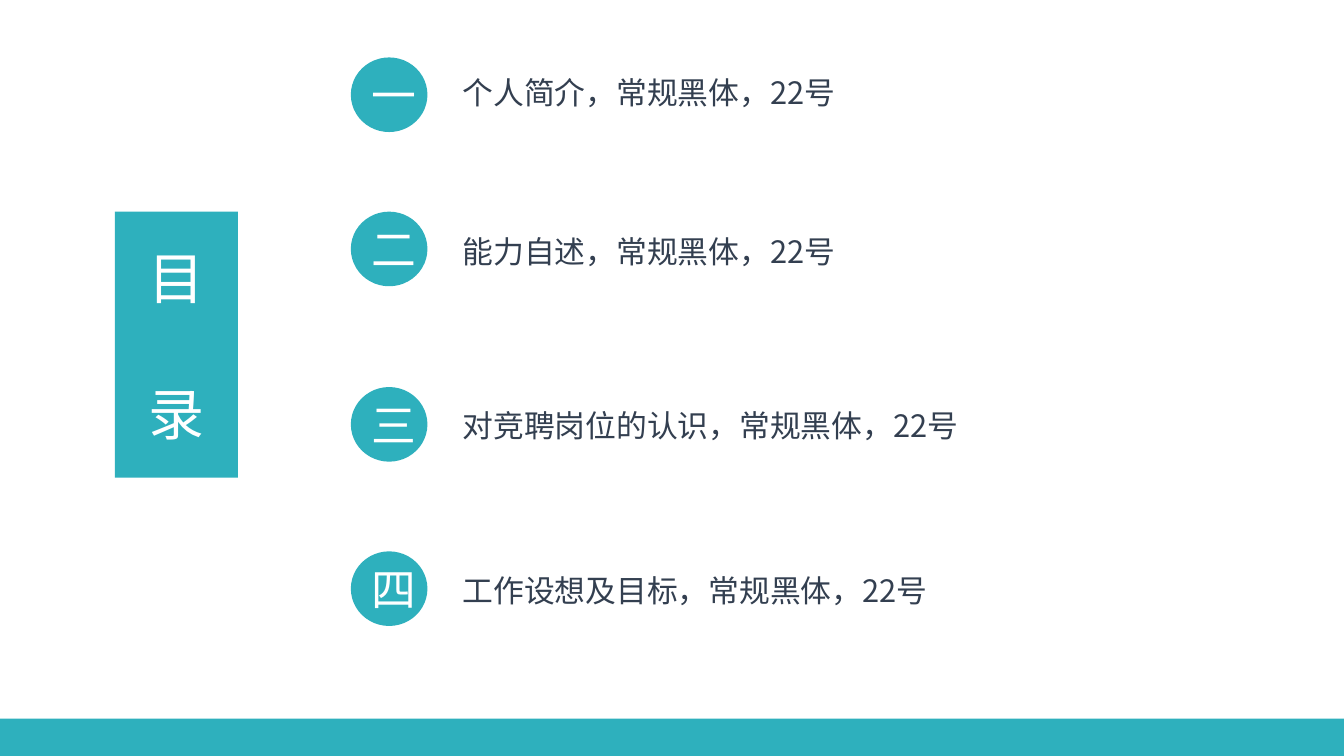
from dataclasses import dataclass

from lxml import etree
from pptx import Presentation
from pptx import util as u
from pptx.dml.color import RGBColor
from pptx.enum import shapes, text
from pptx.oxml.ns import qn


@dataclass(frozen=True)
class Theme:
    """Colours, fonts and type sizes of the deck."""
    teal: str = "2EB0BD"
    white: str = "FFFFFF"
    ink: str = "333F50"
    label_font: str = "Calibri"
    body_font: str = "Noto Sans CJK SC"
    title: int = 40
    number: int = 32
    body: int = 22


T = Theme()
WIDTH, HEIGHT = 13.33, 7.5
CIRCLE_W, CIRCLE_H = 0.76, 0.74
ENTRY_X, ENTRY_H = 1.01, 0.47
ENTRIES = [
    ("一", "个人简介，常规黑体，22号", 0.57, 0.68),
    ("二", "能力自述，常规黑体，22号", 2.1, 2.26),
    ("三", "对竞聘岗位的认识，常规黑体，22号", 3.84, 3.99),
    ("四", "工作设想及目标，常规黑体，22号", 5.47, 5.62),
]


def write(tf, lines, *, size, color, font, align=None, east_asian=None, gap=0):
    """Fill a text frame with one paragraph per line."""
    tf.word_wrap = True
    for i, line in enumerate(lines):
        p = tf.add_paragraph() if i else tf.paragraphs[0]
        p.alignment = align
        if i:
            p.space_before = u.Pt(gap)
        r = p.add_run()
        r.text = line
        r.font.size = u.Pt(size)
        r.font.color.rgb = RGBColor.from_string(color)
        r.font.name = font
        if east_asian:
            ea = etree.SubElement(r.font._element, qn("a:ea"))
            ea.set("typeface", east_asian)


def block(s, kind, box):
    """Add a flat teal shape in a box and return it."""
    sp = s.shapes.add_shape(kind, *map(u.Inches, box))
    sp.shadow.inherit = False
    sp.fill.solid()
    sp.fill.fore_color.rgb = RGBColor.from_string(T.teal)
    sp.line.fill.background()
    sp.text_frame.vertical_anchor = text.MSO_ANCHOR.MIDDLE
    return sp


def heading(s, box):
    """Place the upright contents heading."""
    sp = block(s, shapes.MSO_SHAPE.RECTANGLE, box)
    write(sp.text_frame, "目录", size=T.title, color=T.white,
          font=T.label_font, align=text.PP_ALIGN.CENTER, gap=49)


def entries(s, box):
    """Place the numbered entries in a column."""
    x, y, w, _ = box
    for number, label, circle_y, label_y in ENTRIES:
        sp = block(s, shapes.MSO_SHAPE.OVAL,
                   (x, y + circle_y, CIRCLE_W, CIRCLE_H))
        write(sp.text_frame, [number], size=T.number, color=T.white,
              font=T.label_font, align=text.PP_ALIGN.CENTER)
        tb = s.shapes.add_textbox(*map(u.Inches, (
            x + ENTRY_X, y + label_y, w - ENTRY_X, ENTRY_H)))
        write(tb.text_frame, [label], size=T.body, color=T.ink,
              font=T.body_font, east_asian=T.body_font)
        tb.text_frame.auto_size = text.MSO_AUTO_SIZE.SHAPE_TO_FIT_TEXT


def contents_slide(prs):
    """Add the contents slide with heading, entries and footer bar."""
    s = prs.slides.add_slide(prs.slide_layouts[6])
    block(s, shapes.MSO_SHAPE.RECTANGLE, (0, 7.13, WIDTH, HEIGHT - 7.13))
    heading(s, (1.14, 2.1, 1.22, 2.64))
    entries(s, (3.48, 0, 6.92, 7.13))


def main():
    """Build and save the deck."""
    prs = Presentation()
    prs.slide_width, prs.slide_height = u.Inches(WIDTH), u.Inches(HEIGHT)
    contents_slide(prs)
    prs.save("out.pptx")


if __name__ == "__main__":
    main()
